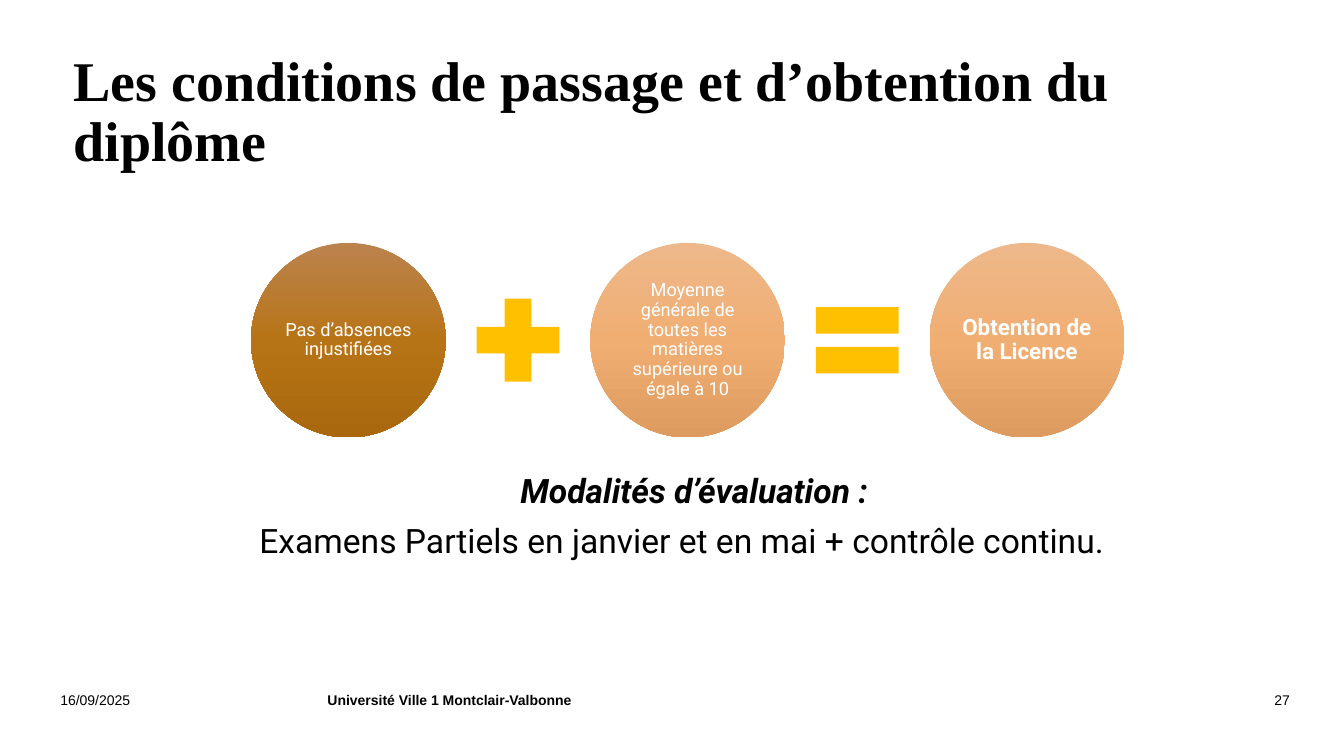
from copy import deepcopy

from pptx import Presentation
from pptx.dml.color import RGBColor
from pptx.enum.shapes import MSO_SHAPE
from pptx.enum.text import MSO_ANCHOR, PP_ALIGN
from pptx.oxml.ns import qn
from pptx.util import Inches, Pt

LEFT, CENTER, RIGHT = PP_ALIGN.LEFT, PP_ALIGN.CENTER, PP_ALIGN.RIGHT
TOP, MIDDLE = MSO_ANCHOR.TOP, MSO_ANCHOR.MIDDLE
OVAL, PLUS, EQUAL = MSO_SHAPE.OVAL, MSO_SHAPE.MATH_PLUS, MSO_SHAPE.MATH_EQUAL

COLORS = {"black": "000000", "white": "FFFFFF", "gold": "FFC000"}
GRADIENTS = {
    "brown": ["BB834E", "B77416", "A9680D"],
    "peach": ["EEB88A", "F0AE73", "DD9B5F"],
}

deck = Presentation()
deck.slide_width, deck.slide_height = Inches(13.33), Inches(7.5)
page = deck.slides.add_slide(deck.slide_layouts[6])


def write(para, text, font, size, color="black", bold=False, italic=False, align=LEFT):
    para.text = text
    para.alignment = align
    for span in para.runs:
        span.font.name = font
        span.font.size = Pt(size)
        span.font.bold = bold
        span.font.italic = italic
        span.font.color.rgb = RGBColor.from_string(COLORS[color])


def add_box(left, top, width, height, anchor=TOP):
    box = page.shapes.add_textbox(Inches(left), Inches(top), Inches(width), Inches(height))
    box.text_frame.word_wrap = True
    box.text_frame.vertical_anchor = anchor
    return box.text_frame


title = add_box(0.63, 0.4, 11.5, 1.45, MIDDLE).paragraphs[0]
write(title, "Les conditions de passage et d’obtention du diplôme", "Times New Roman", 40, bold=True)
title.line_spacing = 0.9

equation = [
    (OVAL, "brown", "Pas d’absences injustifiées", 13, False),
    (PLUS, "gold", "", 0, False),
    (OVAL, "peach", "Moyenne générale de toutes les matières supérieure ou égale à 10", 13, False),
    (EQUAL, "gold", "", 0, False),
    (OVAL, "peach", "Obtention de la Licence", 16, True),
]
first_center, step, middle = 3.455, 1.6825, 3.375
for index, (kind, tint, text, size, bold) in enumerate(equation):
    side = 1.93 if kind == OVAL else 1.12
    left = first_center + index * step - side / 2
    shape = page.shapes.add_shape(
        kind, Inches(left), Inches(middle - side / 2), Inches(side), Inches(side)
    )
    shape.shadow.inherit = False
    shape.line.fill.background()
    if kind != OVAL:
        shape.fill.solid()
        shape.fill.fore_color.rgb = RGBColor.from_string(COLORS[tint])
        continue
    shape.fill.gradient()
    shape.fill.gradient_angle = 270
    stop_list = shape._element.spPr.find(qn("a:gradFill")).find(qn("a:gsLst"))
    stop_list.append(deepcopy(stop_list[0]))
    for stop, position, color in zip(shape.fill.gradient_stops, (0, 0.5, 1), GRADIENTS[tint]):
        stop.position = position
        stop.color.rgb = RGBColor.from_string(color)
    frame = shape.text_frame
    frame.word_wrap = True
    frame.vertical_anchor = MIDDLE
    frame.margin_left = frame.margin_right = frame.margin_top = frame.margin_bottom = Inches(0.02)
    write(frame.paragraphs[0], text, "Roboto", size, "white", bold, align=CENTER)
    frame.paragraphs[0].line_spacing = 0.9

assessment = add_box(2.14, 4.66, 9.24, 1.1)
heading, detail = assessment.paragraphs[0], assessment.add_paragraph()
write(heading, "Modalités d’évaluation :", "Roboto", 24, bold=True, italic=True, align=CENTER)
write(detail, "Examens Partiels en janvier et en mai + contrôle continu.", "Roboto", 24, align=CENTER)
heading.line_spacing = detail.line_spacing = 0.9
detail.space_before = Pt(10)
heading._p.get_or_add_pPr().set("marL", str(Inches(0.25)))

footers = [
    (0.5, 2.06, "16/09/2025", False, LEFT),
    (3.15, 3, "Université Ville 1 Montclair-Valbonne", True, LEFT),
    (11.8, 1.09, "27", False, RIGHT),
]
for left, width, text, bold, align in footers:
    footer = add_box(left, 6.81, width, 0.27).paragraphs[0]
    write(footer, text, "Arial", 10, bold=bold, align=align)

deck.save("out.pptx")
